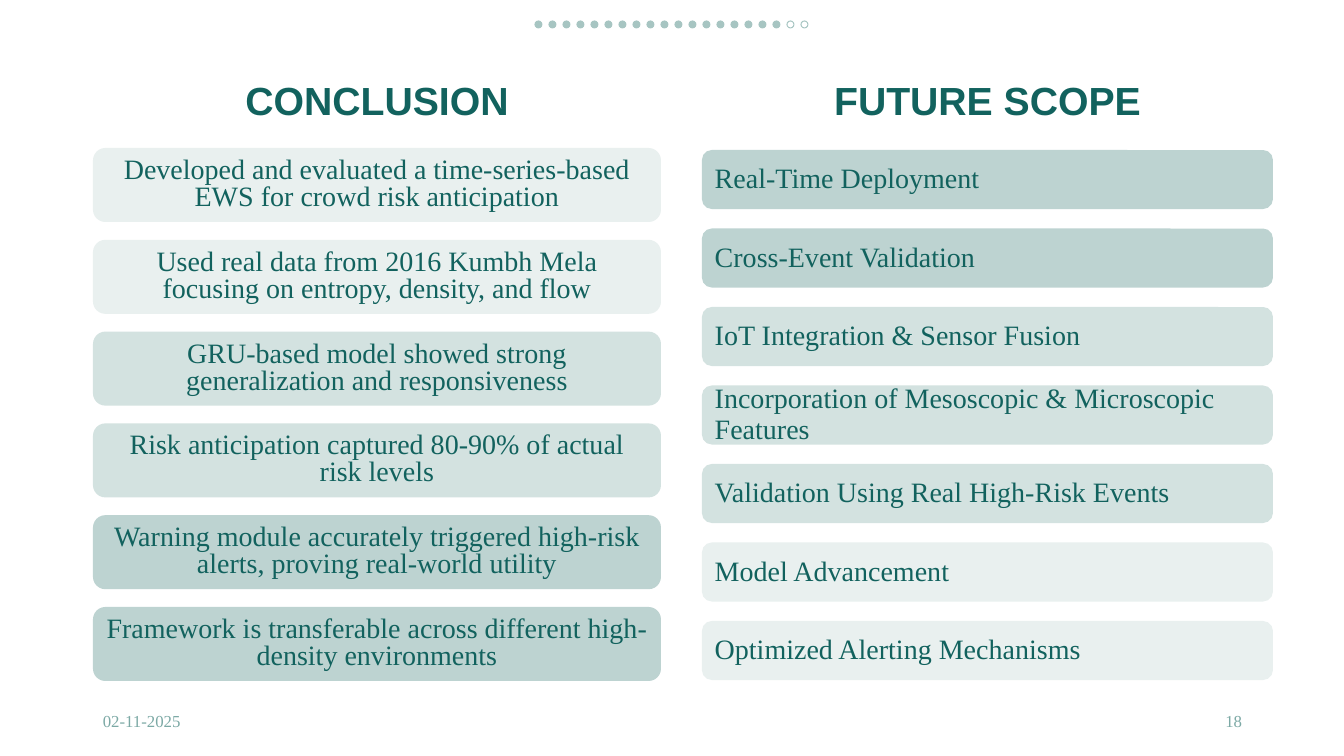
"""Build the conclusion and future scope slide."""
from pptx import Presentation
from pptx.dml.color import RGBColor
from pptx.enum.shapes import MSO_SHAPE as SHAPE
from pptx.enum.text import MSO_ANCHOR as ANCHOR, PP_ALIGN as ALIGN
from pptx.util import Pt

PX = 914400 / 100.8
TEAL, MUTED, DOT = "12625E", "7CA9A5", "A7C5C2"
LIGHT, MID, DARK = "E9F0EF", "D3E2E0", "BDD3D1"
SERIF = "Times New Roman"


def rgb(value):
    return RGBColor.from_string(value)


def set_text(sp, text, size, color, align, spacing=1.0, font=SERIF, bold=False):
    tf = sp.text_frame
    tf.word_wrap = True
    tf.vertical_anchor = ANCHOR.MIDDLE
    p = tf.paragraphs[0]
    p.text = text
    p.alignment = align
    p.line_spacing = spacing
    r = p.runs[0]
    r.font.name = font
    r.font.size = Pt(size)
    r.font.bold = bold
    r.font.color.rgb = rgb(color)


prs = Presentation()
prs.slide_width, prs.slide_height = round(1344 * PX), round(756 * PX)
s = prs.slides.add_slide(prs.slide_layouts[6])

conclusions = [
    ("Developed and evaluated a time-series-based EWS for crowd risk anticipation", LIGHT),
    ("Used real data from 2016 Kumbh Mela focusing on entropy, density, and flow", LIGHT),
    ("GRU-based model showed strong generalization and responsiveness", MID),
    ("Risk anticipation captured 80-90% of actual risk levels", MID),
    ("Warning module accurately triggered high-risk alerts, proving real-world utility", DARK),
    ("Framework is transferable across different high-density environments", DARK),
]
future_scope = [
    ("Real-Time Deployment", DARK),
    ("Cross-Event Validation", DARK),
    ("IoT Integration & Sensor Fusion", MID),
    ("Incorporation of Mesoscopic & Microscopic Features", MID),
    ("Validation Using Real High-Risk Events", MID),
    ("Model Advancement", LIGHT),
    ("Optimized Alerting Mechanisms", LIGHT),
]
columns = [
    ("CONCLUSION", conclusions, 93, 568, 148, 607, 74, ALIGN.CENTER, 0.8),
    ("FUTURE SCOPE", future_scope, 702, 571, 150, 621, 59, ALIGN.LEFT, 0.9),
]
for title, cards, left, width, first, last, height, align, spacing in columns:
    heading = s.shapes.add_textbox(*[round(v * PX) for v in (left, 30, width, 146)])
    set_text(heading, title, 28, TEAL, ALIGN.CENTER, 0.9, "Arial", True)
    step = (last - first) / (len(cards) - 1)
    for i, (text, fill) in enumerate(cards):
        box = (left, first + i * step, width, height)
        sp = s.shapes.add_shape(SHAPE.ROUNDED_RECTANGLE, *[round(v * PX) for v in box])
        sp.shadow.inherit = False
        sp.fill.solid()
        sp.fill.fore_color.rgb = rgb(fill)
        sp.line.fill.background()
        set_text(sp, text, 20, TEAL, align, spacing)

footers = [("02-11-2025", 93, 125, ALIGN.LEFT), ("18", 1169, 83, ALIGN.RIGHT)]
for text, left, width, align in footers:
    footer = s.shapes.add_textbox(*[round(v * PX) for v in (left, 701, width, 40)])
    set_text(footer, text, 12, MUTED, align)

SLIDES_DONE, SLIDES_TOTAL = 18, 20
for i in range(SLIDES_TOTAL):
    dot = s.shapes.add_shape(SHAPE.OVAL, *[round(v * PX) for v in (535 + i * 14, 21, 7, 7)])
    dot.shadow.inherit = False
    dot.fill.solid()
    dot.fill.fore_color.rgb = rgb(DOT if i < SLIDES_DONE else "FFFFFF")
    dot.line.color.rgb = rgb(DOT)
    dot.line.width = Pt(0.71)

prs.save("out.pptx")
